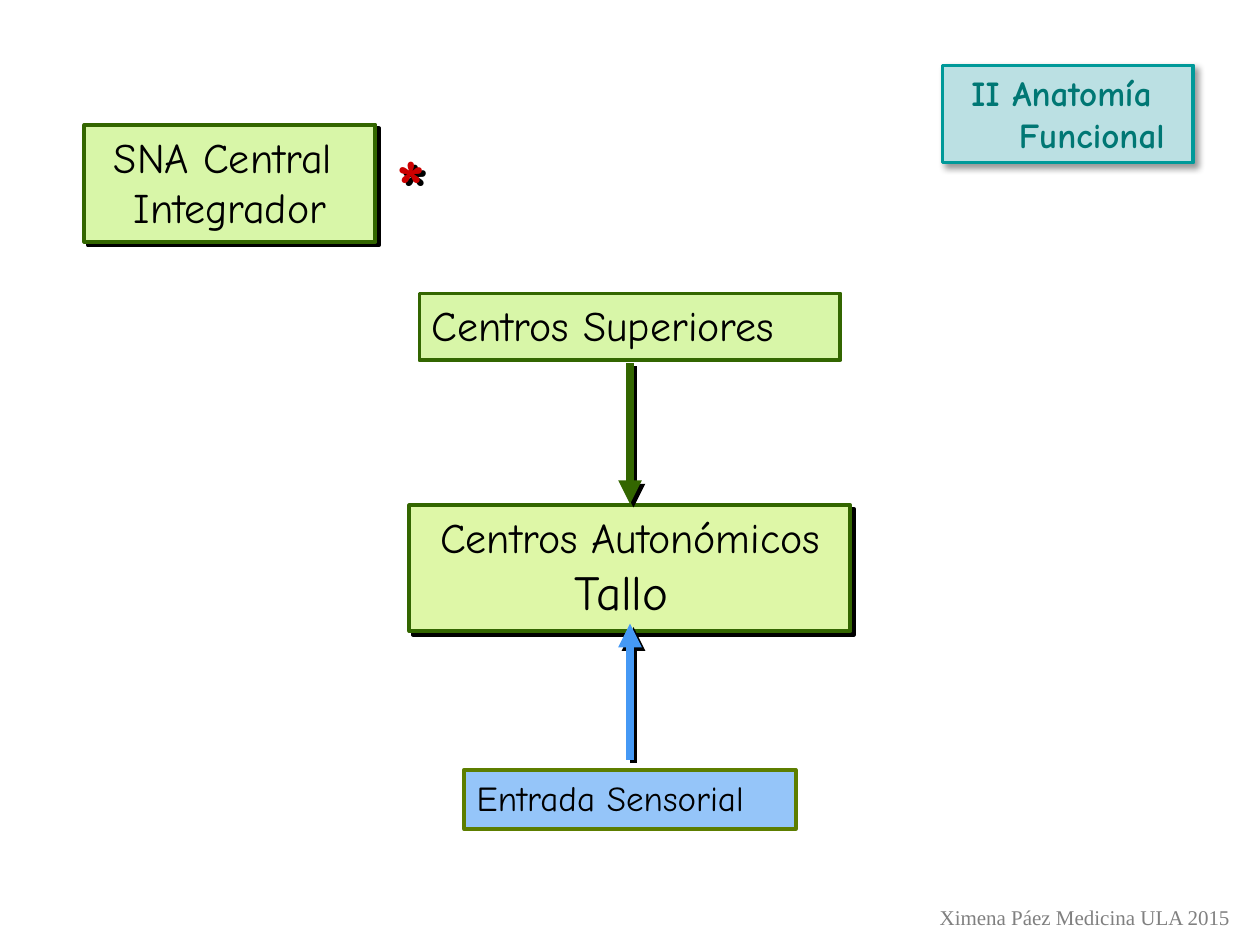
from lxml import etree
from pptx import Presentation
from pptx.dml.color import RGBColor
from pptx.enum import shapes, text
from pptx.oxml import ns
from pptx.util import Inches, Pt

COLORS = {
    "black": "000000", "green": "336600", "lime": "D8F6A8", "pale lime": "DEF7A7",
    "olive": "5D7E00", "sky": "95C5F9", "blue": "4599F5", "red": "CC0000",
    "gray": "808080", "ice": "BBE0E3", "teal": "009999", "dark teal": "007774",
}
HARD_SHADOW = dict(opacity=100, blur=0, distance=2.8)
SOFT_SHADOW = dict(opacity=40, blur=4, distance=3)
CENTER_X = 5


def color(name):
    return RGBColor.from_string(COLORS[name])


def set_shadow(shape, opacity, blur, distance):
    """Replace the inherited shadow with a black one cast at 45 degrees."""
    properties = shape._element.spPr
    for old in properties.findall(ns.qn("a:effectLst")):
        properties.remove(old)
    effects = etree.SubElement(properties, ns.qn("a:effectLst"))
    outer = etree.SubElement(
        effects, ns.qn("a:outerShdw"), blurRad=str(Pt(blur)), dist=str(Pt(distance)),
        dir="2700000", algn="ctr", rotWithShape="0")
    black = etree.SubElement(outer, ns.qn("a:srgbClr"), val=COLORS["black"])
    etree.SubElement(black, ns.qn("a:alpha"), val=str(opacity * 1000))


def write(shape, lines, sizes=(24,), font="Comic Neue", ink="black", bold=False,
          align=text.PP_ALIGN.LEFT, wrap=True):
    """Write one paragraph per line; the last size serves the remaining lines."""
    frame = shape.text_frame
    frame.word_wrap = wrap
    frame.auto_size = text.MSO_AUTO_SIZE.NONE
    frame.vertical_anchor = text.MSO_ANCHOR.TOP
    frame.margin_left = frame.margin_right = Inches(0.1)
    frame.margin_top = frame.margin_bottom = Inches(0.05)
    for index, line in enumerate(lines):
        paragraph = frame.paragraphs[0] if index == 0 else frame.add_paragraph()
        paragraph.alignment = align
        run = paragraph.add_run()
        run.text = line
        run.font.name = font
        run.font.size = Pt(sizes[min(index, len(sizes) - 1)])
        run.font.bold = bold
        run.font.color.rgb = color(ink)


def place(shape, box):
    shape.left, shape.top, shape.width, shape.height = map(Inches, box)


def add_box(slide, box, lines, fill, line, shadow=None, shape=None, **style):
    """Outlined rectangle with text; a given placeholder may serve as the box."""
    if shape is None:
        shape = slide.shapes.add_shape(
            shapes.MSO_SHAPE.RECTANGLE, *map(Inches, box))
        shape.shadow.inherit = False
    else:
        place(shape, box)
    shape.fill.solid()
    shape.fill.fore_color.rgb = color(fill)
    shape.line.color.rgb = color(line)
    shape.line.width = Pt(2.25)
    if shadow:
        set_shadow(shape, **shadow)
    write(shape, lines, **style)
    return shape


def add_label(slide, box, line, **style):
    label = slide.shapes.add_textbox(*map(Inches, box))
    write(label, [line], **style)
    return label


def add_arrow(slide, start, end, ink):
    """Vertical arrow on the slide's centre line."""
    arrow = slide.shapes.add_connector(
        shapes.MSO_CONNECTOR.STRAIGHT, Inches(CENTER_X), Inches(start),
        Inches(CENTER_X), Inches(end))
    arrow.line.color.rgb = color(ink)
    arrow.line.width = Pt(4.5)
    etree.SubElement(arrow.line._get_or_add_ln(), ns.qn("a:tailEnd"), type="triangle")
    set_shadow(arrow, **HARD_SHADOW)


def add_heading(slide, box):
    left, top, width, height = box
    add_box(slide, box, ["SNA Central ", "Integrador"], "lime", "green",
            HARD_SHADOW, slide.shapes.title, align=text.PP_ALIGN.CENTER)
    star = add_label(slide, (left + width + 0.07, top + 0.05, 0.52, 0.83), "*",
                     sizes=(44,), ink="red", bold=True)
    set_shadow(star, **HARD_SHADOW)


def add_flow(slide, top):
    """Higher centres and sensory input, both pointing to the brainstem."""
    def centered(offset, width, height):
        return CENTER_X - width / 2, top + offset, width, height

    add_box(slide, centered(0, 3.34, 0.53), ["Centros Superiores"], "lime", "green")
    add_box(slide, centered(1.68, 3.5, 1), ["Centros Autonómicos", "Tallo "],
            "pale lime", "green", HARD_SHADOW, sizes=(24, 28),
            align=text.PP_ALIGN.CENTER)
    add_box(slide, centered(3.78, 2.63, 0.47), ["Entrada Sensorial"], "sky", "olive",
            sizes=(20,))
    add_arrow(slide, top + 3.7, top + 2.62, "blue")
    add_arrow(slide, top + 0.55, top + 1.67, "green")


def add_section_tag(slide, box):
    tag = add_box(slide, box, ["II Anatomía ", "Funcional"], "ice", "teal",
                  SOFT_SHADOW, sizes=(20,), ink="dark teal", bold=True,
                  align=text.PP_ALIGN.CENTER)
    # The second line is indented
    second = tag.text_frame.paragraphs[1]._p.get_or_add_pPr()
    second.set("marL", str(Inches(0.38)))


def main():
    presentation = Presentation()
    presentation.slide_width, presentation.slide_height = Inches(10), Inches(7.5)
    slide = presentation.slides.add_slide(presentation.slide_layouts[5])

    add_heading(slide, (0.67, 0.99, 2.31, 0.93))
    add_flow(slide, 2.33)
    add_section_tag(slide, (7.48, 0.52, 1.99, 0.77))
    # Credit line
    add_label(slide, (7.36, 7.13, 2.53, 0.3), "Ximena Páez Medicina ULA 2015",
              sizes=(12,), font="Times New Roman", ink="gray", wrap=False)

    presentation.save("out.pptx")


if __name__ == "__main__":
    main()
